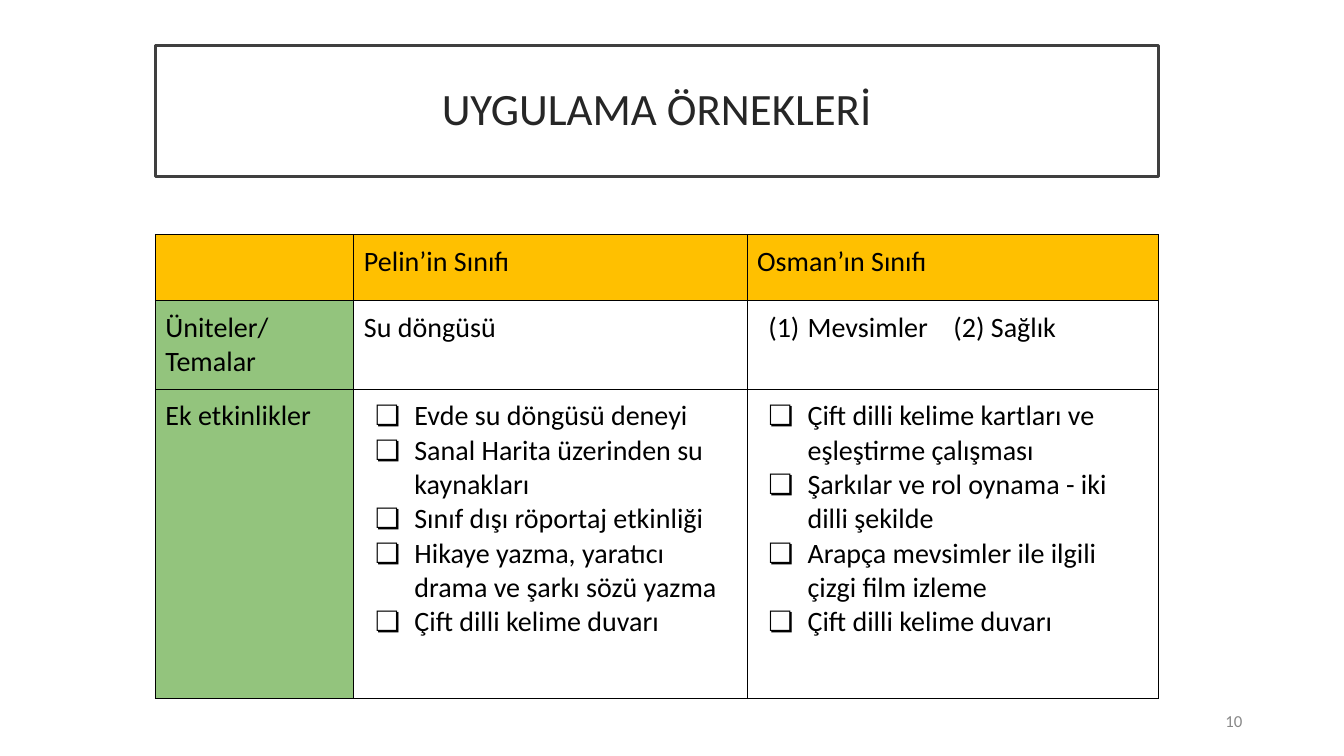
from dataclasses import dataclass
from typing import Any, Optional

from lxml.etree import SubElement
from pptx import Presentation
from pptx.dml.color import RGBColor
from pptx.enum.text import MSO_ANCHOR, PP_ALIGN
from pptx.oxml import parse_xml
from pptx.oxml.ns import nsdecls, qn
from pptx.util import Inches, Pt

FONT = "Calibri"
WHITE = RGBColor(0xFF, 0xFF, 0xFF)
BLACK = RGBColor(0x00, 0x00, 0x00)
AMBER = RGBColor(0xFF, 0xC0, 0x00)
GREEN = RGBColor(0x93, 0xC4, 0x7D)
CHARCOAL = RGBColor(0x3F, 0x3F, 0x3F)
TITLE_INK = RGBColor(0x26, 0x26, 0x26)
GREY = RGBColor(0x88, 0x88, 0x88)

LEFT, WIDTH = 1.54, 9.95
COLUMN_WIDTHS = (1.97, 3.9, 4.08)
ROW_HEIGHTS = (0.65, 0.88, 3.07)
THEME_GAP = Pt(13.6)
MARGINS = ("margin_left", "margin_right", "margin_top", "margin_bottom")


@dataclass(frozen=True)
class CellContent:
    lines: tuple[str, ...] = ()
    fill: Optional[RGBColor] = None
    bullet: Optional[tuple[str, str, str]] = None


CHECKBOX = ("buChar", "char", "❏")
NUMBERED = ("buAutoNum", "type", "arabicParenBoth")

ROWS = (
    (
        CellContent(fill=AMBER),
        CellContent(("Pelin’in Sınıfı",), AMBER),
        CellContent(("Osman’ın Sınıfı",), AMBER),
    ),
    (
        CellContent(("Üniteler/ Temalar",), GREEN),
        CellContent(("Su döngüsü",)),
        CellContent(("Mevsimler",), bullet=NUMBERED),
    ),
    (
        CellContent(("Ek etkinlikler",), GREEN),
        CellContent(
            (
                "Evde su döngüsü deneyi",
                "Sanal Harita üzerinden su kaynakları",
                "Sınıf dışı röportaj etkinliği",
                "Hikaye yazma, yaratıcı drama ve şarkı sözü yazma",
                "Çift dilli kelime duvarı",
            ),
            bullet=CHECKBOX,
        ),
        CellContent(
            (
                "Çift dilli kelime kartları ve eşleştirme çalışması",
                "Şarkılar ve rol oynama - iki dilli şekilde",
                "Arapça mevsimler ile ilgili çizgi film izleme",
                "Çift dilli kelime duvarı",
            ),
            bullet=CHECKBOX,
        ),
    ),
)


def apply_format(target: Any, values: dict[str, Any]) -> None:
    for name, value in values.items():
        setattr(target, name, value)


def add_span(para: Any, text: str, size: float, color: RGBColor) -> Any:
    span = para.add_run()
    span.text = text
    apply_format(span.font, {"name": FONT, "size": Pt(size), "bold": False})
    span.font.color.rgb = color
    return span


def add_bullet(para: Any, bullet: tuple[str, str, str]) -> None:
    tag, key, value = bullet
    properties = para._p.get_or_add_pPr()
    properties.set("marL", str(Inches(0.5)))
    properties.set("indent", str(Inches(-0.39)))
    color = SubElement(properties, qn("a:buClr"))
    SubElement(color, qn("a:srgbClr")).set("val", str(BLACK))
    SubElement(properties, qn("a:buFont")).set("typeface", FONT)
    SubElement(properties, qn(f"a:{tag}")).set(key, value)


def add_borders(cell: Any) -> None:
    properties = cell._tc.get_or_add_tcPr()
    for index, side in enumerate("LRTB"):
        border = parse_xml(
            f'<a:ln{side} {nsdecls("a")} w="{Pt(0.75)}"><a:solidFill>'
            f'<a:srgbClr val="{BLACK}"/></a:solidFill></a:ln{side}>'
        )
        properties.insert(index, border)


def fill_cell(cell: Any, content: CellContent) -> None:
    apply_format(cell, dict.fromkeys(MARGINS, Inches(0.1)))
    if content.fill is None:
        cell.fill.background()
    else:
        cell.fill.solid()
        cell.fill.fore_color.rgb = content.fill
    add_borders(cell)
    for index, line in enumerate(content.lines):
        frame = cell.text_frame
        para = frame.paragraphs[0] if index == 0 else frame.add_paragraph()
        if content.bullet:
            add_bullet(para, content.bullet)
        add_span(para, line, 20, BLACK)


def add_title(page: Any) -> None:
    box = page.shapes.title
    apply_format(box, {"left": Inches(LEFT), "top": Inches(0.45),
                       "width": Inches(WIDTH), "height": Inches(1.3)})
    box.fill.solid()
    box.fill.fore_color.rgb = WHITE
    box.line.color.rgb = CHARCOAL
    box.line.width = Pt(2.5)
    frame = box.text_frame
    apply_format(frame, dict.fromkeys(MARGINS, Inches(0.2)))
    apply_format(frame, {"word_wrap": True, "vertical_anchor": MSO_ANCHOR.MIDDLE})
    para = frame.paragraphs[0]
    apply_format(para, {"alignment": PP_ALIGN.CENTER, "line_spacing": 0.9})
    add_span(para, "UYGULAMA ÖRNEKLERİ", 32, TITLE_INK)


def add_examples_table(page: Any) -> None:
    table = page.shapes.add_table(
        len(ROW_HEIGHTS), len(COLUMN_WIDTHS), Inches(LEFT), Inches(2.33),
        Inches(WIDTH), Inches(sum(ROW_HEIGHTS)),
    ).table
    apply_format(table, {"first_row": False, "horz_banding": False})
    for column, width in zip(table.columns, COLUMN_WIDTHS):
        column.width = Inches(width)
    for row, height, contents in zip(table.rows, ROW_HEIGHTS, ROWS):
        row.height = Inches(height)
        for cell, content in zip(row.cells, contents):
            fill_cell(cell, content)
    themes = table.cell(1, 2).text_frame.paragraphs[0]
    gap = add_span(themes, " ", 20, BLACK)
    gap.font._element.set("spc", str(int(THEME_GAP.pt * 100)))
    add_span(themes, "(2) Sağlık", 20, BLACK)


def add_page_number(page: Any) -> None:
    box = page.shapes.add_textbox(Inches(9.42), Inches(6.95), Inches(3), Inches(0.4))
    frame = box.text_frame
    apply_format(frame, {"word_wrap": True, "vertical_anchor": MSO_ANCHOR.MIDDLE})
    para = frame.paragraphs[0]
    para.alignment = PP_ALIGN.RIGHT
    add_span(para, "10", 12, GREY)


def main() -> None:
    deck = Presentation()
    apply_format(deck, {"slide_width": Inches(13.33), "slide_height": Inches(7.5)})
    page = deck.slides.add_slide(deck.slide_layouts.get_by_name("Title Only"))
    add_title(page)
    add_examples_table(page)
    add_page_number(page)
    deck.save("out.pptx")


if __name__ == "__main__":
    main()
